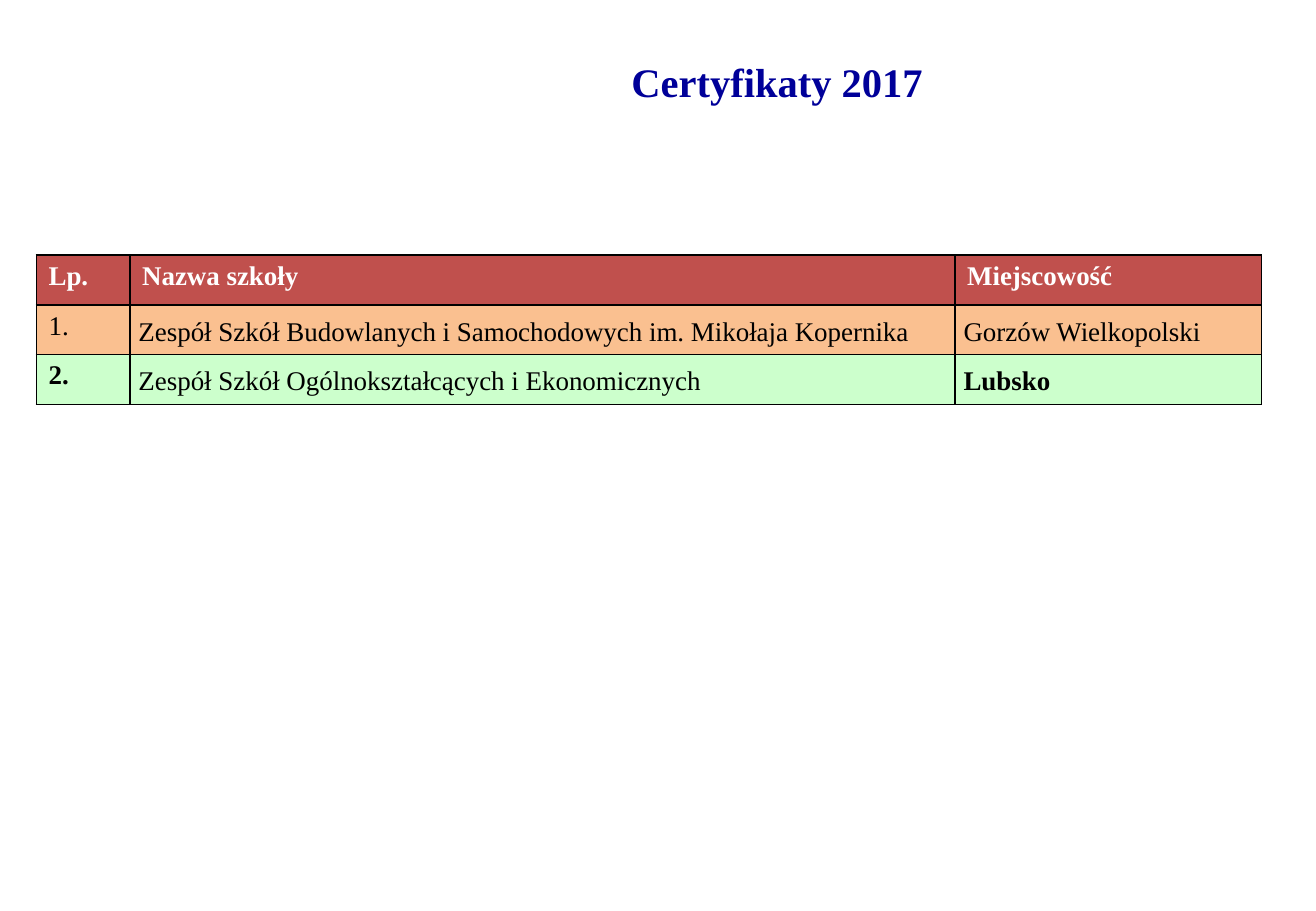
from dataclasses import dataclass

import pptx
import pptx.dml.color
import pptx.enum.text
import pptx.oxml
import pptx.oxml.ns
import pptx.util

Inches = pptx.util.Inches
Anchor = pptx.enum.text.MSO_ANCHOR
Align = pptx.enum.text.PP_ALIGN

FONT = "Times New Roman"
COLORS = {
    "navy": "000099",
    "white": "FFFFFF",
    "black": "000000",
    "red": "C0504D",
    "orange": "FAC090",
    "green": "CCFFCC",
}
WIDTHS = (0.77, 6.79, 2.52)
HEIGHT = 0.41


@dataclass(frozen=True)
class Row:
    texts: tuple[str, str, str]
    fill: str
    bolds: tuple[bool, bool, bool]
    color: str = "black"
    head: bool = False


ROWS = (
    Row(("Lp.", "Nazwa szkoły", "Miejscowość"), "red", (True, True, True),
        "white", True),
    Row(("1.", "Zespół Szkół Budowlanych i Samochodowych im. Mikołaja Kopernika",
         "Gorzów Wielkopolski"), "orange", (False, False, False)),
    Row(("2.", "Zespół Szkół Ogólnokształcących i Ekonomicznych", "Lubsko"),
        "green", (True, False, True)),
)


def rgb(name: str) -> pptx.dml.color.RGBColor:
    return pptx.dml.color.RGBColor.from_string(COLORS[name])


def write(frame, text: str, *, size: int = 16, color: str = "black",
          bold: bool = False, align=Align.LEFT, space: float | None = None) -> None:
    para = frame.paragraphs[0]
    para.alignment = align
    if space:
        para.line_spacing = space
    run = para.add_run()
    run.text = text
    run.font.name = FONT
    run.font.size = pptx.util.Pt(size)
    run.font.bold = bold
    run.font.color.rgb = rgb(color)


def frame_cell(cell) -> None:
    """Put a thin black border on all four sides, before the fill."""
    props = cell._tc.get_or_add_tcPr()
    for place, side in enumerate(("lnL", "lnR", "lnT", "lnB")):
        props.insert(place, pptx.oxml.parse_xml(
            f'<a:{side} {pptx.oxml.ns.nsdecls("a")} w="{pptx.util.Pt(1)}">'
            f'<a:solidFill><a:srgbClr val="{COLORS["black"]}"/></a:solidFill>'
            f'</a:{side}>'))


def add_title(slide) -> None:
    box = slide.shapes.add_textbox(Inches(2.12), Inches(0.16), Inches(8.55), Inches(1.02))
    frame = box.text_frame
    frame.word_wrap = True
    frame.vertical_anchor = Anchor.MIDDLE
    write(frame, "Certyfikaty 2017", size=24, color="navy", bold=True,
          align=Align.CENTER)


def add_schools(slide) -> None:
    table = slide.shapes.add_table(
        len(ROWS), len(WIDTHS), Inches(0.3), Inches(2.1),
        Inches(sum(WIDTHS)), Inches(HEIGHT * len(ROWS))).table
    table.horz_banding = False
    for column, width in zip(table.columns, WIDTHS):
        column.width = Inches(width)
    for line, row in zip(table.rows, ROWS):
        line.height = Inches(HEIGHT)
        for index, cell in enumerate(line.cells):
            cell.fill.solid()
            cell.fill.fore_color.rgb = rgb(row.fill)
            frame_cell(cell)
            tight = index > 0 and not row.head
            if tight:
                cell.vertical_anchor = Anchor.MIDDLE
                cell.margin_left = cell.margin_right = Inches(0.07)
                cell.margin_top = cell.margin_bottom = 0
            write(cell.text_frame, row.texts[index], color=row.color,
                  bold=row.bolds[index], space=1.15 if tight else None)


def main() -> None:
    deck = pptx.Presentation()
    deck.slide_width, deck.slide_height = Inches(10.83), Inches(7.5)
    slide = deck.slides.add_slide(deck.slide_layouts[6])
    add_title(slide)
    add_schools(slide)
    deck.save("out.pptx")


if __name__ == "__main__":
    main()
